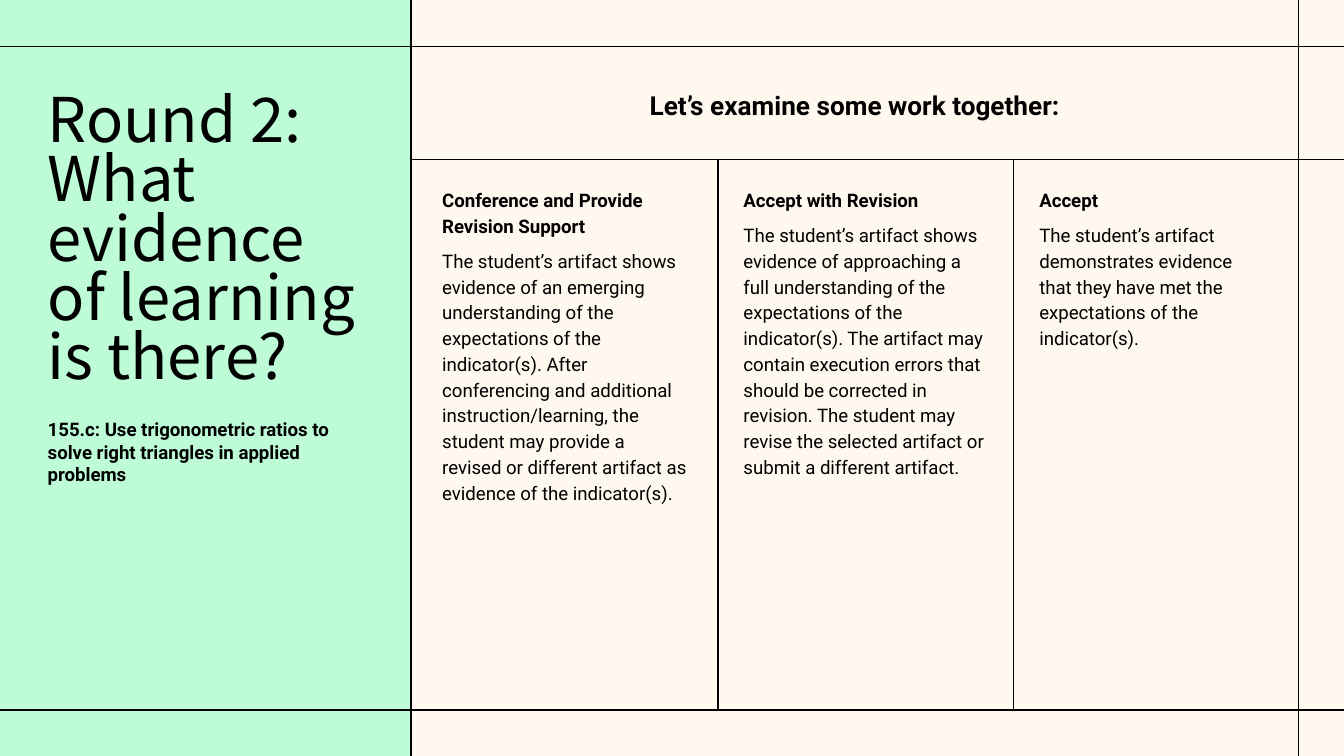
from lxml import etree
from pptx import Presentation
from pptx import util as u
from pptx.dml.color import RGBColor
from pptx.enum import shapes, text
from pptx.oxml.ns import qn

# The grid is 100 columns by 56.25 rows of square cells (a 16:9 slide).
CELL = u.Inches(0.1)
WIDE, HIGH = 100, 56.25
PANEL_EDGE, RIGHT_RULE = 30.58, 96.6
TOP_RULE, HEADING_RULE, BOTTOM_RULE = 3.45, 11.85, 52.83
COLUMN_EDGES = [31, 53.42, 75.43]
COLORS = {"paper": "FFF8EF", "mint": "BDFCD7", "ink": "000000"}
LEVELS = [
    ("Conference and Provide Revision Support",
     "The student’s artifact shows evidence of an emerging understanding of the "
     "expectations of the indicator(s). After conferencing and additional "
     "instruction/learning, the student may provide a revised or different "
     "artifact as evidence of the indicator(s)."),
    ("Accept with Revision",
     "The student’s artifact shows evidence of approaching a full understanding "
     "of the expectations of the indicator(s). The artifact may contain execution "
     "errors that should be corrected in revision. The student may revise the "
     "selected artifact or submit a different artifact."),
    ("Accept",
     "The student’s artifact demonstrates evidence \vthat they have met the "
     "expectations of the indicator(s)."),
]


def cells(*counts):
    return [u.Emu(round(count * CELL)) for count in counts]


def color(name):
    return RGBColor.from_string(COLORS[name])


def add_rule(page, x1, y1, x2, y2):
    rule = page.shapes.add_connector(shapes.MSO_CONNECTOR.STRAIGHT, *cells(x1, y1, x2, y2))
    rule.line.color.rgb = color("ink")
    rule.line.width = u.Pt(0.75)
    etree.SubElement(rule.element.spPr, qn("a:effectLst"))


def write(shape, words, size, font="Roboto", bold=False, spacing=1.0,
          align=text.PP_ALIGN.LEFT):
    """Fill a shape with one paragraph per line of words, without margins."""
    frame = shape.text_frame
    frame.text = words
    frame.word_wrap = True
    frame.auto_size = text.MSO_AUTO_SIZE.NONE
    frame.vertical_anchor = text.MSO_ANCHOR.TOP
    frame.margin_left = frame.margin_right = frame.margin_top = frame.margin_bottom = 0
    for para in frame.paragraphs:
        para.alignment = align
        para.line_spacing = spacing
        for span in para.runs:
            span.font.name = font
            span.font.size = u.Pt(size)
            span.font.bold = bold
            span.font.color.rgb = color("ink")
    return frame


def add_title_panel(page, left, top, width, height):
    panel = page.shapes.add_shape(shapes.MSO_SHAPE.RECTANGLE, *cells(left, top, width, height))
    panel.shadow.inherit = False
    panel.fill.solid()
    panel.fill.fore_color.rgb = color("mint")
    panel.line.fill.background()

    inset, inner = left + 3.55, width - 6.9
    title = page.shapes.title
    title.left, title.top, title.width, title.height = cells(inset, top + 7.1, inner, 22.2)
    write(title, "Round 2:\nWhat evidence of learning is there?", 33,
          font="Noto Sans CJK KR", spacing=0.8)
    panel.element.addnext(title.element)  # the title stands in front of the panel

    standard = page.shapes.add_textbox(*cells(inset, top + 31.1, inner, 5))
    write(standard, "155.c: Use trigonometric ratios to solve right triangles "
          "in applied problems", 10, bold=True)


def add_heading(page, left, top, width, height):
    box = page.shapes.add_textbox(*cells(left, top, width, height))
    write(box, "Let’s examine some work together:", 14, bold=True,
          align=text.PP_ALIGN.CENTER)


def add_level(page, left, top, width, height, name, meaning):
    box = page.shapes.add_textbox(*cells(left + 1.9, top + 1.95, width, height))
    frame = write(box, f"{name}\n{meaning}", 10, spacing=1.15)
    heading, body = frame.paragraphs
    heading.runs[0].font.bold = True
    body.space_before = body.space_after = u.Pt(5)


def add_frame(page):
    for y in (TOP_RULE, BOTTOM_RULE):
        add_rule(page, 0, y, WIDE, y)
    add_rule(page, PANEL_EDGE, HEADING_RULE, WIDE, HEADING_RULE)
    for x in (PANEL_EDGE, RIGHT_RULE):
        add_rule(page, x, 0, x, HIGH)
    for x in COLUMN_EDGES[1:]:
        add_rule(page, x, HEADING_RULE, x, BOTTOM_RULE)


def main():
    deck = Presentation()
    deck.slide_width, deck.slide_height = cells(WIDE, HIGH)
    page = deck.slides.add_slide(deck.slide_layouts[5])
    page.background.fill.solid()
    page.background.fill.fore_color.rgb = color("paper")

    add_title_panel(page, 0, 0, PANEL_EDGE, HIGH)
    add_frame(page)
    add_heading(page, 34.1, 6.65, 59, 2.4)
    for edge, (name, meaning) in zip(COLUMN_EDGES, LEVELS):
        add_level(page, edge, HEADING_RULE, 18.2, 25.6, name, meaning)
    deck.save("out.pptx")


if __name__ == "__main__":
    main()
